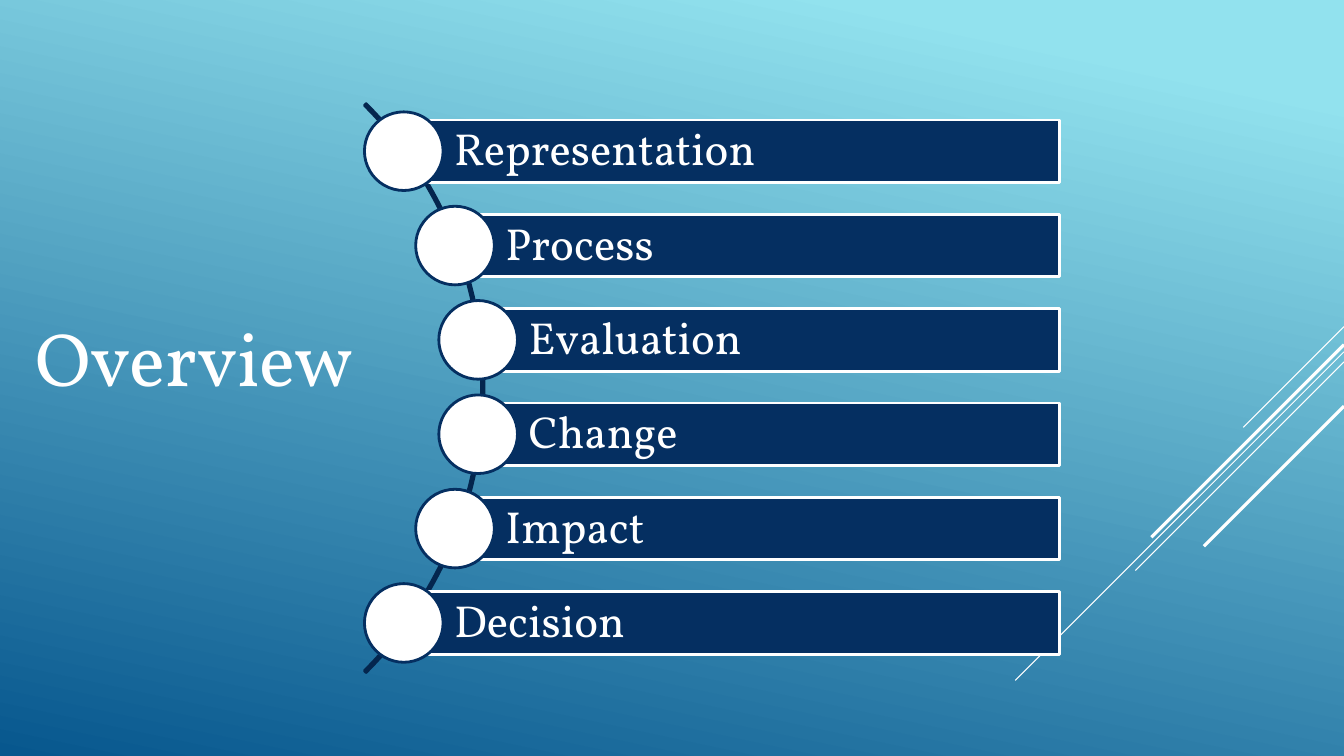
from copy import deepcopy
from dataclasses import dataclass
from math import sqrt

from lxml.etree import SubElement
from pptx import Presentation
from pptx.dml.color import RGBColor
from pptx.enum.shapes import MSO_CONNECTOR, MSO_SHAPE
from pptx.enum.text import MSO_ANCHOR, PP_ALIGN
from pptx.oxml.ns import qn
from pptx.util import Inches, Pt


@dataclass(frozen=True)
class Theme:
    font: str = "Vollkorn"
    white: str = "FFFFFF"
    navy: str = "052F61"
    arc: str = "04264E"
    sky: str = "92E2EE"
    deep: str = "07578E"
    title_size: float = 54
    label_size: float = 32
    outline: float = 2
    thin: float = 0.75
    thick: float = 2.25


# The grid has square cells
COLUMNS, ROWS = 13.33, 7.5
CELL = Inches(1)


class SlideBuilder:
    def __init__(self, deck, theme):
        self.theme = theme
        self.page = deck.slides.add_slide(deck.slide_layouts[6])

    def cells(self, *lengths):
        return [round(length * CELL) for length in lengths]

    def background(self, stops, angle):
        fill = self.page.background.fill
        fill.gradient()
        fill.gradient_angle = 360 - angle
        first = self.page.element.find(".//" + qn("a:gs"))
        for _ in range(len(stops) - 2):
            first.addnext(deepcopy(first))
        for stop, (position, color) in zip(fill.gradient_stops, stops):
            stop.position = position
            stop.color.rgb = RGBColor.from_string(color)

    def line(self, start, end, width):
        connector = self.page.shapes.add_connector(
            MSO_CONNECTOR.STRAIGHT, *self.cells(*start, *end))
        self.outline(connector, self.theme.white, width)
        SubElement(connector.element.spPr, qn("a:effectLst"))

    def outline(self, item, color, width):
        item.line.color.rgb = RGBColor.from_string(color)
        item.line.width = Pt(width)

    def shape(self, kind, place, fill, line, adjustments=()):
        shape = self.page.shapes.add_shape(kind, *self.cells(*place))
        shape.shadow.inherit = False
        if fill:
            shape.fill.solid()
            shape.fill.fore_color.rgb = RGBColor.from_string(fill)
        else:
            shape.fill.background()
        self.outline(shape, line, self.theme.outline)
        for index, value in enumerate(adjustments):
            shape.adjustments[index] = value
        return shape

    def label(self, box, text, size, anchor, insets):
        frame = box.text_frame
        frame.word_wrap = True
        frame.vertical_anchor = anchor
        (frame.margin_left, frame.margin_top,
         frame.margin_right, frame.margin_bottom) = self.cells(*insets)
        para = frame.paragraphs[0]
        para.text = text
        para.alignment = PP_ALIGN.LEFT
        para.font.name = self.theme.font
        para.font.size = Pt(size)
        para.font.color.rgb = RGBColor.from_string(self.theme.white)
        return para

    def title(self, text, place):
        box = self.page.shapes.add_textbox(*self.cells(*place))
        self.label(box, text, self.theme.title_size, MSO_ANCHOR.BOTTOM,
                   (0.1, 0.05, 0.1, 0.05))

    def topic(self, text, center_x, center_y, right):
        bar_height, diameter = 0.62, 0.78
        bar = self.shape(
            MSO_SHAPE.RECTANGLE,
            (center_x, center_y - bar_height / 2, right - center_x, bar_height),
            self.theme.navy, self.theme.white)
        para = self.label(bar, text, self.theme.label_size, MSO_ANCHOR.MIDDLE,
                          (0.5, 0.09, 0.09, 0.09))
        para.line_spacing = 0.9
        self.shape(
            MSO_SHAPE.OVAL,
            (center_x - diameter / 2, center_y - diameter / 2, diameter, diameter),
            self.theme.white, self.theme.navy)


def main():
    deck = Presentation()
    deck.slide_width, deck.slide_height = round(COLUMNS * CELL), round(ROWS * CELL)
    theme = Theme()
    builder = SlideBuilder(deck, theme)

    # Background
    builder.background([(0, theme.sky), (0.1, theme.sky), (1, theme.deep)], 102)

    # Diagonal lines falling from the right edge at 45 degrees
    for top, drop, width in [(3.24, 1, theme.thin), (3.49, 3.26, theme.thin),
                             (3.59, 2.07, theme.thin), (3.42, 1.91, theme.thick),
                             (4.03, 1.39, theme.thick)]:
        builder.line((COLUMNS, top), (COLUMNS - drop, top + drop), width)

    # Arc that carries the topics
    arc_x, arc_y, radius = 0.81, 3.85, 3.99
    builder.shape(MSO_SHAPE.BLOCK_ARC,
                  (arc_x - radius, arc_y - radius, 2 * radius, 2 * radius),
                  None, theme.arc, (189, 27, 0.003))

    # Topics at equal steps, their circles centred along the arc
    topics = ["Representation", "Process", "Evaluation", "Change", "Impact", "Decision"]
    first_y, last_y, track_radius, bar_right = 1.5, 6.18, 3.96, 10.51
    step = (last_y - first_y) / (len(topics) - 1)
    middle_y = (first_y + last_y) / 2
    for index, topic in enumerate(topics):
        center_y = first_y + index * step
        center_x = arc_x + sqrt(track_radius ** 2 - (center_y - middle_y) ** 2)
        builder.topic(topic, center_x, center_y, bar_right)

    # Title
    builder.title("Overview", (0.25, 0.78, 8.75, 3.25))

    deck.save("out.pptx")


if __name__ == "__main__":
    main()
